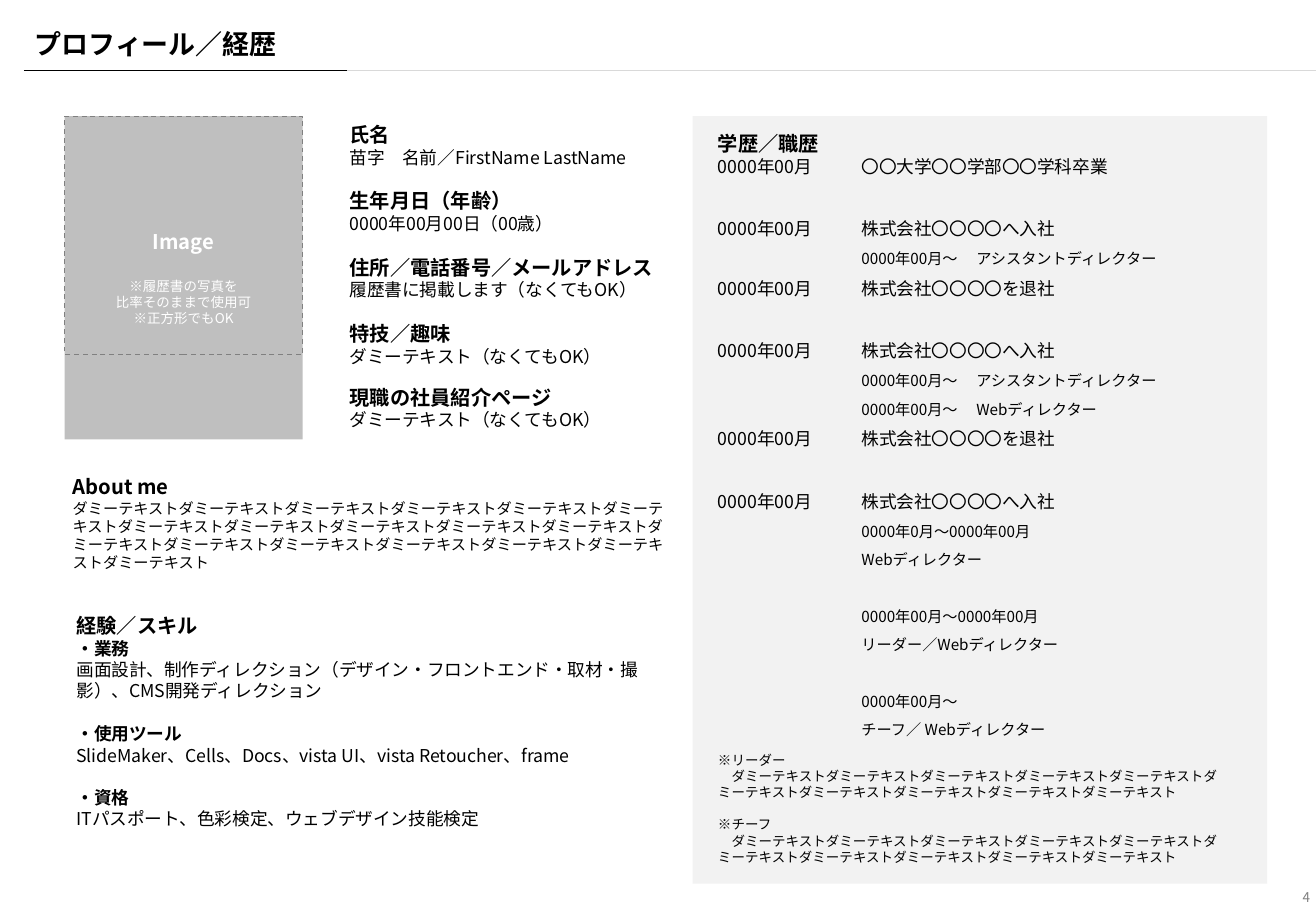
from lxml import etree
from pptx import Presentation
from pptx import util as u
from pptx.dml.color import RGBColor
from pptx.enum import dml, shapes, text
from pptx.oxml.ns import qn

BLACK, WHITE, GRAY = "000000", "FFFFFF", "808080"
LEFT, CENTER, RIGHT = text.PP_ALIGN.LEFT, text.PP_ALIGN.CENTER, text.PP_ALIGN.RIGHT
TOP, MIDDLE, BOTTOM = text.MSO_ANCHOR.TOP, text.MSO_ANCHOR.MIDDLE, text.MSO_ANCHOR.BOTTOM


def rgb(value):
    return RGBColor.from_string(value)


def para(words, size, bold=False, before=0):
    return words, size, bold, before


def head(words, before=0):
    return para(words, 12, True, before)


class Page:
    FONT = "Noto Sans CJK JP"

    def __init__(self, prs):
        self.slide = prs.slides.add_slide(prs.slide_layouts[6])

    def line(self, x1, x2, y, color):
        sp = self.slide.shapes.add_connector(
            shapes.MSO_CONNECTOR.STRAIGHT, u.Cm(x1), u.Cm(y), u.Cm(x2), u.Cm(y))
        sp.line.color.rgb = rgb(color)
        sp.line.width = u.Pt(0.5)
        etree.SubElement(sp._element.spPr, qn("a:effectLst"))

    def rect(self, x, y, w, h, fill=None, dash=None):
        sp = self.slide.shapes.add_shape(
            shapes.MSO_SHAPE.RECTANGLE, u.Cm(x), u.Cm(y), u.Cm(w), u.Cm(h))
        sp.shadow.inherit = False
        if fill:
            sp.fill.solid()
            sp.fill.fore_color.rgb = rgb(fill)
        else:
            sp.fill.background()
        if dash:
            sp.line.color.rgb = rgb(dash)
            sp.line.width = u.Pt(0.75)
            sp.line.dash_style = dml.MSO_LINE.DASH
        else:
            sp.line.fill.background()
        return sp

    def text(self, x, y, w, h, paras, **style):
        sp = self.slide.shapes.add_textbox(u.Cm(x), u.Cm(y), u.Cm(w), u.Cm(h))
        self.set_text(sp, paras, **style)

    def set_text(self, sp, paras, color=BLACK, align=LEFT, anchor=TOP, wrap=True, tab=0, after=0):
        tf = sp.text_frame
        tf.word_wrap = wrap
        tf.vertical_anchor = anchor
        for i, (words, size, bold, before) in enumerate(paras):
            p = tf.paragraphs[0] if i == 0 else tf.add_paragraph()
            p.add_run().text = words
            p.alignment = align
            p.space_before = u.Pt(before)
            p.font.name, p.font.size, p.font.bold = self.FONT, u.Pt(size), bold
            p.font.color.rgb = rgb(color)
            pPr = p._p.get_or_add_pPr()
            defRPr = pPr.find(qn("a:defRPr"))
            etree.SubElement(defRPr, qn("a:ea"), typeface=self.FONT)
            if i and tab:  # hanging indent for the dated rows
                p.space_after = u.Pt(after)
                pPr.set("marL", str(u.Cm(tab)))
                pPr.set("indent", str(-u.Cm(tab)))
                tabs = etree.Element(qn("a:tabLst"))
                etree.SubElement(tabs, qn("a:tab"), pos=str(u.Cm(tab)), algn="l")
                defRPr.addprevious(tabs)


def main():
    prs = Presentation()
    prs.slide_width, prs.slide_height = u.Cm(27.51), u.Cm(19.05)
    page = Page(prs)

    # Title and rules
    page.line(0.5, 27.51, 1.47, "D9D9D9")
    page.line(0.5, 7.26, 1.47, BLACK)
    page.text(0.48, 0.46, 5.64, 0.94, [para("プロフィール／経歴", 16, True)], wrap=False)

    # Portrait
    portrait = page.rect(1.35, 2.43, 4.98, 6.76, fill="BFBFBF")
    page.set_text(portrait, [
        head("Image"),
        para("※履歴書の写真を", 8, before=14.2),
        para("比率そのままで使用可", 8),
        para("※正方形でもOK", 8),
    ], color=WHITE, align=CENTER, anchor=MIDDLE)
    page.rect(1.35, 2.43, 4.98, 4.98, dash=GRAY)

    # Personal details
    details = [
        ("氏名", "苗字　名前／FirstName LastName", 0),
        ("生年月日（年齢）", "0000年00月00日（00歳）", 12.4),
        ("住所／電話番号／メールアドレス", "履歴書に掲載します（なくてもOK）", 12.4),
        ("特技／趣味", "ダミーテキスト（なくてもOK）", 12.4),
        ("現職の社員紹介ページ", "ダミーテキスト（なくてもOK）", 10.7),
    ]
    page.text(7.06, 2.43, 7.09, 6.81, [
        p for label, value, gap in details for p in (head(label, gap), para(value, 10.5))])

    # About me
    page.text(1.27, 9.8, 12.85, 2.31, [head("About me"), para("ダミーテキスト" * 18, 9)])

    # Skills
    skills = [
        ("・業務", "画面設計、制作ディレクション（デザイン・フロントエンド・取材・撮影）、CMS開発ディレクション", 0),
        ("・使用ツール", "SlideMaker、Cells、Docs、vista UI、vista Retoucher、frame", 13),
        ("・資格", "ITパスポート、色彩検定、ウェブデザイン技能検定", 12.4),
    ]
    page.text(1.35, 12.7, 12.78, 4.83, [head("経験／スキル")] + [
        p for label, value, gap in skills
        for p in (para(label, 10.5, True, gap), para(value, 10.5))])

    # Education and career
    page.rect(14.48, 2.43, 12.01, 16.05, fill="F2F2F2")
    date = "0000年00月\t"
    joined = para(date + "株式会社〇〇〇〇へ入社", 10.5, before=18.4)
    left = para(date + "株式会社〇〇〇〇を退社", 10.5)
    assistant = para("\t0000年00月〜　 アシスタントディレクター", 9)
    page.text(14.76, 2.62, 11.05, 12.98, [
        head("学歴／職歴"),
        para(date + "〇〇大学〇〇学部〇〇学科卒業", 10.5),
        joined, assistant, left,
        joined, assistant, para("\t0000年00月〜　 Webディレクター", 9), left,
        joined,
        para("\t0000年0月〜0000年00月", 9),
        para("\tWebディレクター", 9),
        para("\t0000年00月〜0000年00月", 9, before=16.7),
        para("\tリーダー／Webディレクター", 9),
        para("\t0000年00月〜", 9, before=16.7),
        para("\tチーフ／ Webディレクター", 9),
    ], tab=3, after=6)

    # Role notes
    note = para("　" + "ダミーテキスト" * 10, 8)
    page.text(14.76, 15.6, 11.48, 2.64, [
        para("※リーダー", 8), note, para("※チーフ", 8, before=9.5), note])

    # Page number
    page.text(21.44, 18.03, 6.2, 1.02, [para("4", 8)], color=GRAY, align=RIGHT, anchor=BOTTOM)

    prs.save("out.pptx")


if __name__ == "__main__":
    main()
